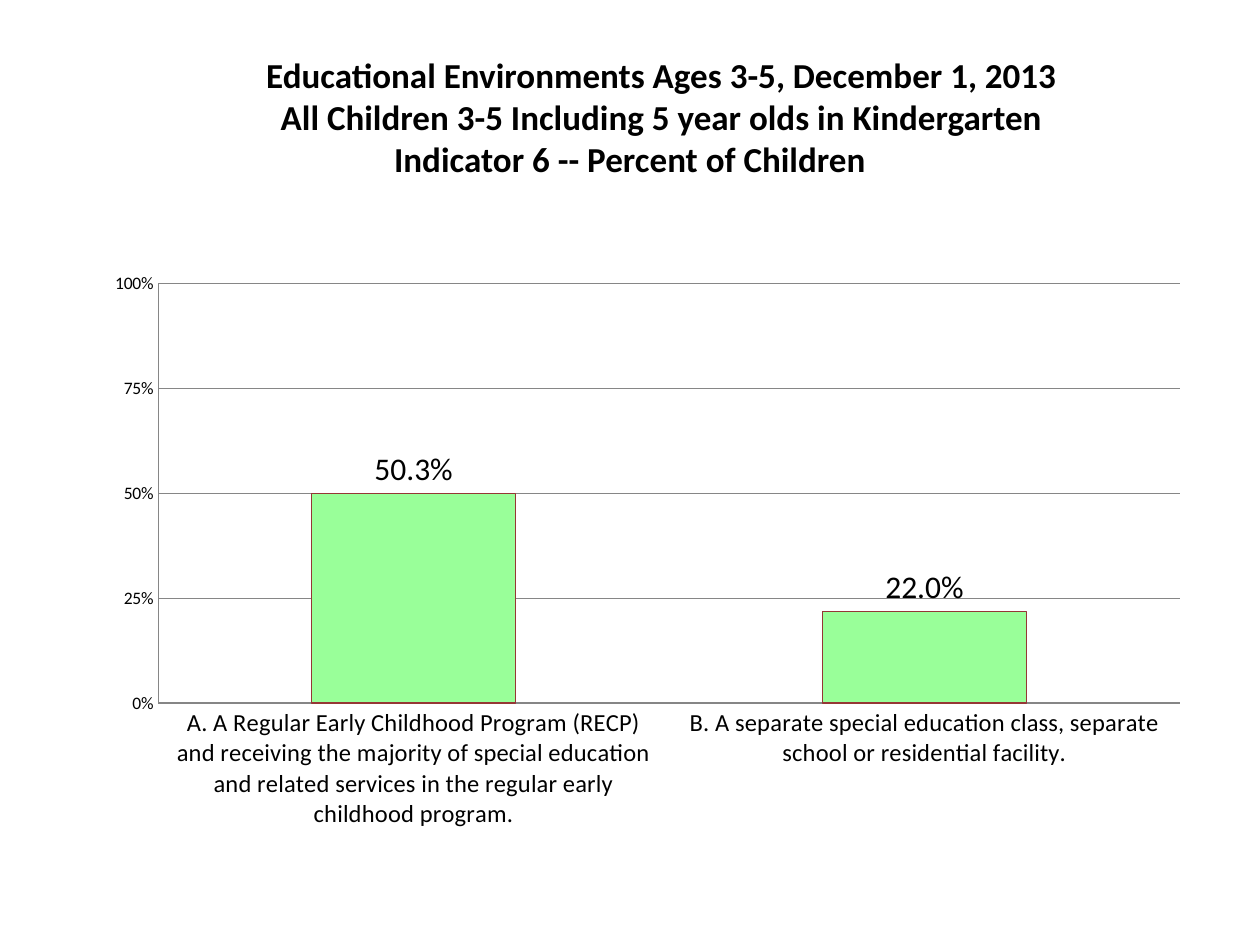
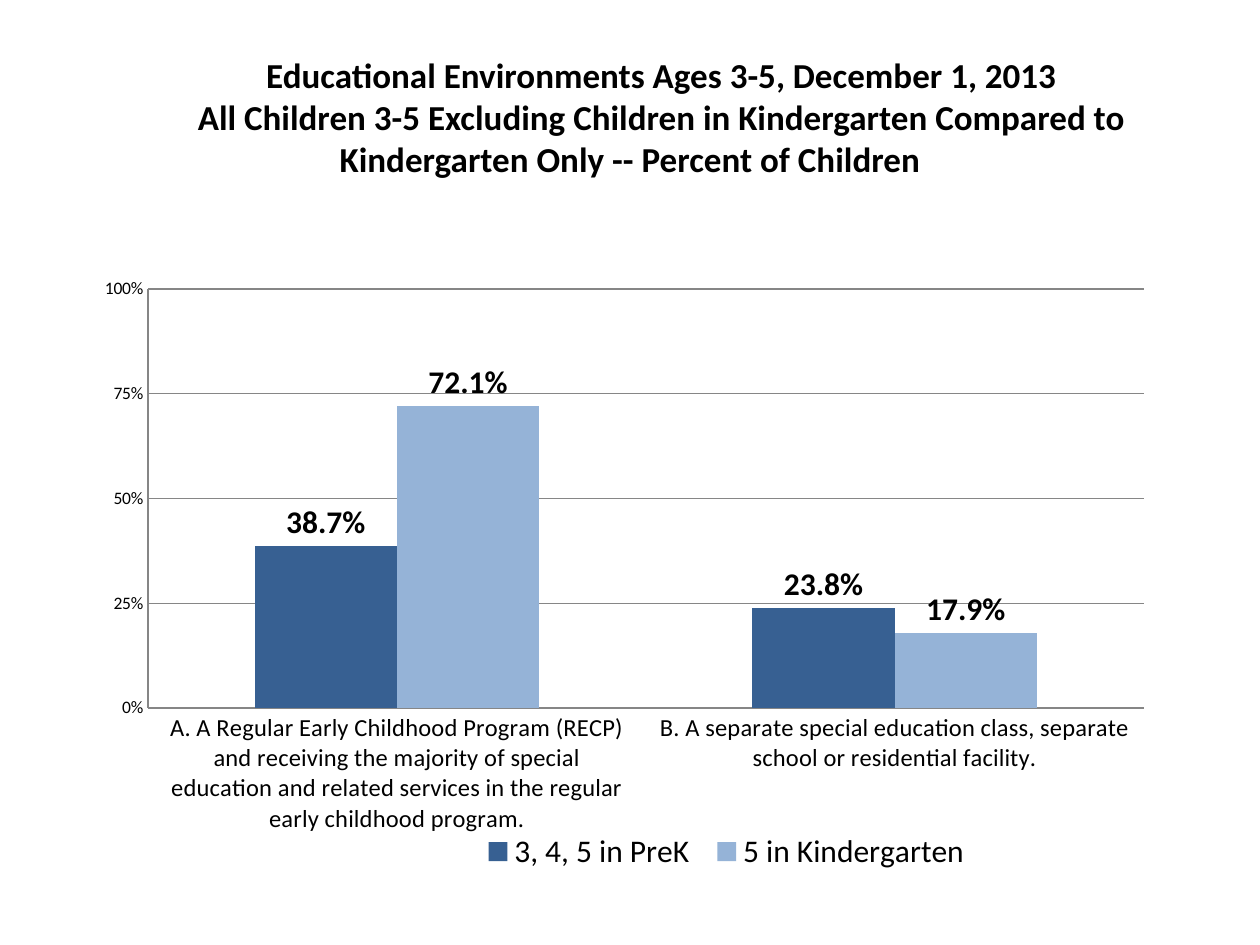
from lxml import etree
from pptx import Presentation
from pptx.chart.data import CategoryChartData
from pptx.dml.color import RGBColor
from pptx.enum.chart import XL_CHART_TYPE, XL_LABEL_POSITION, XL_LEGEND_POSITION, XL_TICK_MARK
from pptx.enum.text import MSO_ANCHOR, PP_ALIGN
from pptx.oxml.ns import qn
from pptx.util import Inches, Pt

COLUMNS = XL_CHART_TYPE.COLUMN_CLUSTERED
OUTSIDE_END = XL_LABEL_POSITION.OUTSIDE_END
BOTTOM = XL_LEGEND_POSITION.BOTTOM
NO_TICK = XL_TICK_MARK.NONE
MIDDLE = MSO_ANCHOR.MIDDLE
CENTER = PP_ALIGN.CENTER

FONT = "Calibri"
BLACK = "000000"
GRID = "868686"

ENVIRONMENTS = [
    "A. A Regular Early Childhood Program (RECP) and receiving the majority of special "
    "education and related services in the regular early childhood program.",
    "B. A separate special education class, separate school or residential facility.",
]

# Series: name, values, fill, outline, label texts that replace the values
SLIDES = [
    {
        "title": ["\tEducational Environments Ages 3-5, December 1, 2013",
                  "\tAll Children 3-5 Including 5 year olds in Kindergarten",
                  "Indicator 6 -- Percent of Children"],
        "top": 1.75, "height": 4.95,
        "plot": (0.084, 0.101, 0.901, 0.673),
        "legend": None,
        "bold_labels": False,
        "series": [("Series 1", (0.5, 0.218), "99FF99", "953735", ("50.3%", "22.0%"))],
    },
    {
        "title": ["\tEducational Environments Ages 3-5, December 1, 2013",
                  "\tAll Children 3-5 Excluding Children in Kindergarten Compared to "
                  "Kindergarten Only -- Percent of Children"],
        "top": 1.67, "height": 5.33,
        "plot": (0.075, 0.117, 0.878, 0.624),
        "legend": (0.36, 0.92, 0.45, 0.07),
        "bold_labels": True,
        "series": [("3, 4, 5 in PreK", (0.387, 0.238), "376092", None, ()),
                   ("5 in Kindergarten", (0.721, 0.179), "95B3D7", None, ())],
    },
]


def rgb(value):
    return RGBColor.from_string(value)


def set_layout(parent, index, box, inner=False):
    """Place a chart part by fractions of the chart's size."""
    for old in parent.findall(qn("c:layout")):
        parent.remove(old)
    layout = etree.Element(qn("c:layout"))
    manual = etree.SubElement(layout, qn("c:manualLayout"))
    settings = [("layoutTarget", "inner")] if inner else []
    settings += [("xMode", "edge"), ("yMode", "edge"), *zip("xywh", box)]
    for tag, value in settings:
        etree.SubElement(manual, qn(f"c:{tag}")).set("val", str(value))
    parent.insert(index, layout)


prs = Presentation()
prs.slide_width, prs.slide_height = Inches(10), Inches(7.5)

for content in SLIDES:
    slide = prs.slides.add_slide(prs.slide_layouts[6])

    # Title
    title = slide.shapes.add_textbox(Inches(0.5), Inches(0.3), Inches(9), Inches(1.25)).text_frame
    title.word_wrap = True
    title.vertical_anchor = MIDDLE
    heading = title.paragraphs[0]
    heading.alignment = CENTER
    for number, line in enumerate(content["title"]):
        if number:
            heading.add_line_break()
        run = heading.add_run()
        run.text = line
        run.font.name, run.font.size, run.font.bold = FONT, Pt(20), True
        run.font.color.rgb = rgb(BLACK)

    # Chart
    data = CategoryChartData(number_format="0.0%")
    data.categories = ENVIRONMENTS
    for name, values, *_ in content["series"]:
        data.add_series(name, values)
    chart = slide.shapes.add_chart(COLUMNS, Inches(0.5), Inches(content["top"]), Inches(9),
                                   Inches(content["height"]), data).chart
    chart.has_title = False
    chart.font.name, chart.font.size = FONT, Pt(10)
    chart.font.color.rgb = rgb(BLACK)
    plot = chart.plots[0]
    plot.gap_width, plot.overlap = 150, 0
    plot.vary_by_categories = False
    set_layout(chart._chartSpace.chart.plotArea, 0, content["plot"], inner=True)

    # Axes
    percent, environment = chart.value_axis, chart.category_axis
    percent.minimum_scale, percent.maximum_scale, percent.major_unit = 0, 1, 0.25
    percent.tick_labels.number_format = "0%"
    percent.tick_labels.number_format_is_linked = False
    percent.has_major_gridlines = True
    environment.tick_labels.font.size = Pt(14)
    for axis in (percent, environment):
        axis.major_tick_mark = axis.minor_tick_mark = NO_TICK
    for rule in (percent, environment, percent.major_gridlines):
        rule.format.line.color.rgb = rgb(GRID)
        rule.format.line.width = Pt(0.75)

    # Columns and their labels
    for series, (_, _, fill, outline, label_texts) in zip(plot.series, content["series"]):
        series.invert_if_negative = False
        series.format.fill.solid()
        series.format.fill.fore_color.rgb = rgb(fill)
        if outline:
            series.format.line.color.rgb = rgb(outline)
            series.format.line.width = Pt(0.75)
        labels = series.data_labels
        labels.show_value = True
        labels.position = OUTSIDE_END
        labels.number_format, labels.number_format_is_linked = "0.0%", False
        labels.font.size, labels.font.bold = Pt(18), content["bold_labels"]
        for point, text in enumerate(label_texts):
            label = series.points[point].data_label
            run = label.text_frame.paragraphs[0].add_run()
            run.text = text
            run.font.name, run.font.size, run.font.bold = FONT, Pt(18), content["bold_labels"]
            run.font.color.rgb = rgb(BLACK)
            label.position = OUTSIDE_END

    # Legend
    chart.has_legend = content["legend"] is not None
    if chart.has_legend:
        chart.legend.position = BOTTOM
        chart.legend.include_in_layout = False
        chart.legend.font.size = Pt(18)
        set_layout(chart._chartSpace.chart.find(qn("c:legend")), 1, content["legend"])

prs.save("out.pptx")
